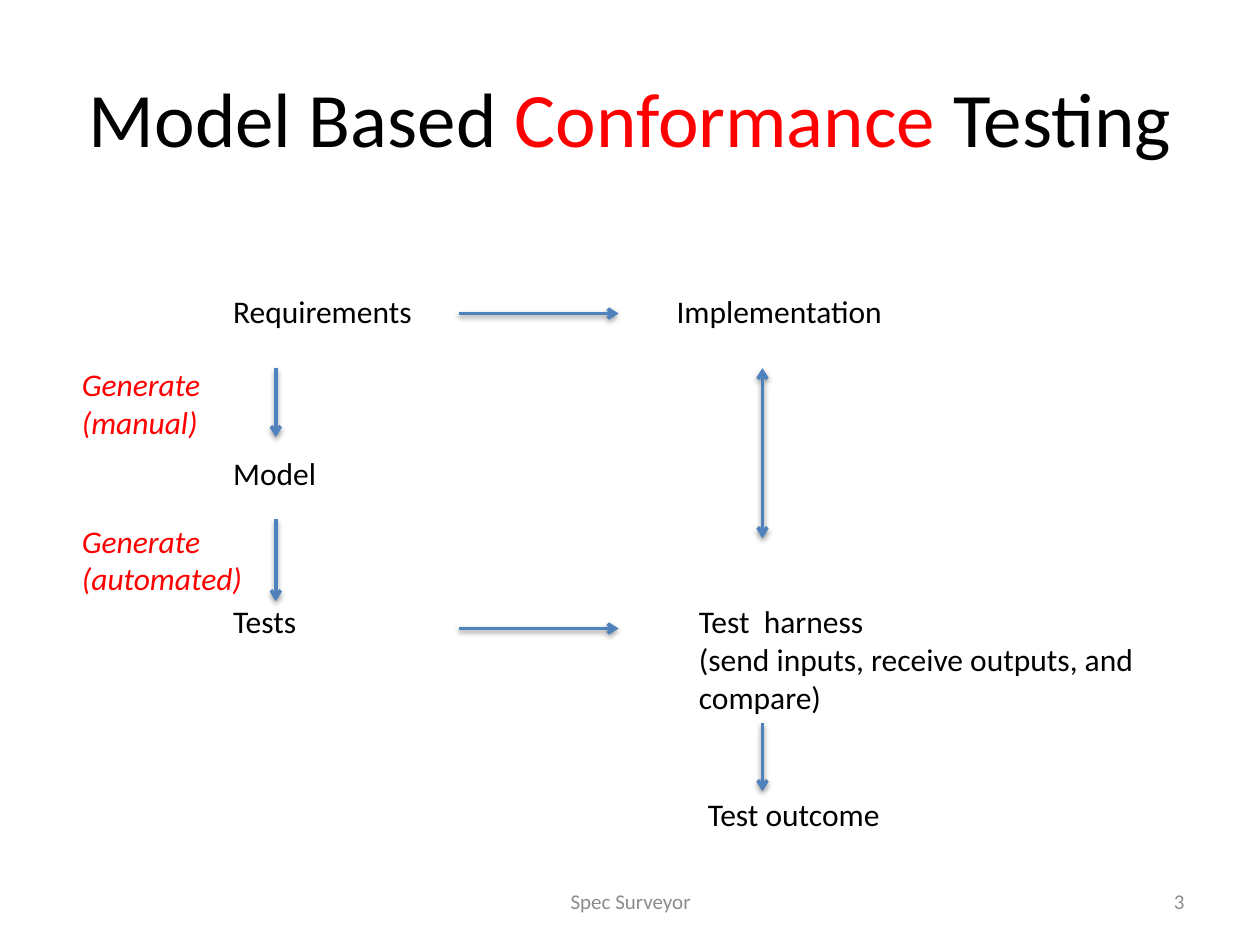
from lxml import etree
from pptx import Presentation
from pptx.dml.color import RGBColor
from pptx.enum import shapes, text
from pptx.oxml import ns
from pptx.util import Cm, Pt

BLACK, RED, BLUE, GREY = "000000", "FF0000", "4F81BD", "8C8C8C"

# Content: lengths in cm
TITLE = [("Model Based ", BLACK), ("Conformance", RED), (" Testing", BLACK)]
LEFT, SIDE = 4.45, 1.4
NODES = [  # lines, left, top, width
    (["Requirements"], LEFT, 5.77, 4.19),
    (["Implementation"], 13.39, 5.77, 4.72),
    (["Model"], LEFT, 9.02, 2.21),
    (["Tests"], LEFT, 12.01, 1.85),
    (["Test  harness", "(send inputs, receive outputs, and", "compare)"],
     13.84, 12.01, 9.37),
    (["Test outcome"], 14.02, 15.9, 4.09),
]
NOTES = [
    (["Generate", "(manual)"], SIDE, 7.24, 3.1),
    (["Generate", "(automated)"], SIDE, 10.39, 4.09),
]
ACROSS = (9.25, 12.47)
MODEL_X, TEST_X = 5.56, 15.37
ARROWS = [  # x1, y1, x2, y2, both ends
    (ACROSS[0], 6.32, ACROSS[1], 6.32, False),
    (ACROSS[0], 12.67, ACROSS[1], 12.67, False),
    (MODEL_X, 7.42, MODEL_X, 8.81, False),
    (MODEL_X, 10.46, MODEL_X, 12.12, False),
    (TEST_X, 10.85, TEST_X, 7.42, True),
    (TEST_X, 14.58, TEST_X, 15.95, False),
]
FOOT = [
    ("Spec Surveyor", 8.69, 8.05, text.PP_ALIGN.CENTER),
    ("3", 18.21, 5.92, text.PP_ALIGN.RIGHT),
]


def color(code):
    return RGBColor.from_string(code)


def write(para, words, size=18, fill=BLACK, italic=False):
    run = para.add_run()
    run.text = words
    font = run.font
    font.name, font.size, font.italic = "Calibri", Pt(size), italic
    font.color.rgb = color(fill)


def label(lines, left, top, width, height=None, wrap=False,
          align=text.PP_ALIGN.LEFT, anchor=text.MSO_ANCHOR.TOP, **style):
    height = height or 0.25 + 0.77 * len(lines)
    box = slide.shapes.add_textbox(Cm(left), Cm(top), Cm(width), Cm(height))
    frame = box.text_frame
    frame.word_wrap, frame.vertical_anchor = wrap, anchor
    for i, line in enumerate(lines):
        para = frame.add_paragraph() if i else frame.paragraphs[0]
        para.alignment = align
        write(para, line, **style)


def node(parent, tag, **attrs):
    return etree.SubElement(parent, ns.qn(tag), attrs)


def arrow(x1, y1, x2, y2, both):
    link = slide.shapes.add_connector(
        shapes.MSO_CONNECTOR.STRAIGHT, Cm(x1), Cm(y1), Cm(x2), Cm(y2))
    link.line.width = Pt(2)
    link.line.color.rgb = color(BLUE)
    line = link.line._get_or_add_ln()
    for end in ["a:headEnd"] * both + ["a:tailEnd"]:
        node(line, end, type="arrow")
    # Soft shadow straight below the line
    effect = node(link._element.spPr, "a:effectLst")
    shade = node(effect, "a:outerShdw", blurRad=str(Pt(3.1)),
                 dist=str(Pt(1.6)), dir="5400000", rotWithShape="0")
    node(node(shade, "a:srgbClr", val=BLACK), "a:alpha", val="38000")


deck = Presentation()
deck.slide_width, deck.slide_height = Cm(25.4), Cm(19.05)
slide = deck.slides.add_slide(deck.slide_layouts[5])

# Title
title = slide.shapes.title
title.left, title.top = Cm(1.27), Cm(0.76)
title.width, title.height = Cm(22.86), Cm(3.18)
title.text_frame.vertical_anchor = text.MSO_ANCHOR.MIDDLE
head = title.text_frame.paragraphs[0]
head.alignment = text.PP_ALIGN.CENTER
for words, fill in TITLE:
    write(head, words, size=44, fill=fill)

# Diagram
for item in NODES:
    label(*item)
for item in NOTES:
    label(*item, fill=RED, italic=True)
for item in ARROWS:
    arrow(*item)

# Footer
for words, left, width, align in FOOT:
    label([words], left, 17.65, width, height=1.02, wrap=True, align=align,
          anchor=text.MSO_ANCHOR.MIDDLE, size=12, fill=GREY)

deck.save("out.pptx")
